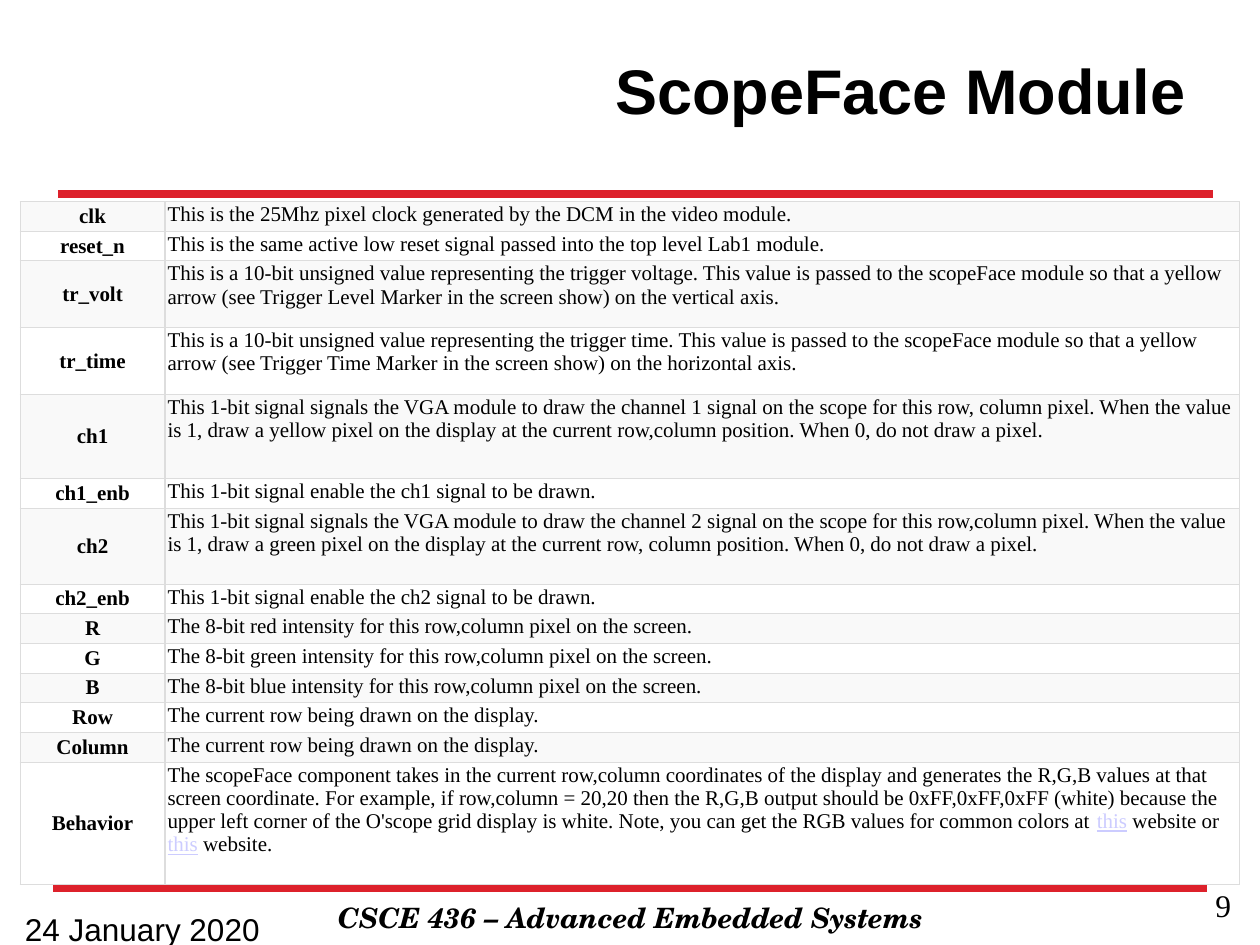
import pptx
import pptx.util
import pptx.dml.color
import pptx.enum.shapes
import pptx.enum.text
import pptx.oxml
import pptx.oxml.ns
import lxml.etree

Inches = pptx.util.Inches
ALIGN = pptx.enum.text.PP_ALIGN
ANCHOR = pptx.enum.text.MSO_ANCHOR

COLORS = {"text": "000000", "rule": "DD212B", "border": "DDDDDD",
          "odd": "F9F9F9", "even": "FFFFFF", "link": "CCCCFF"}
SERIF = "Times New Roman"
SLIDE_WIDTH, SLIDE_HEIGHT = 10, 7.5

TITLE = "ScopeFace Module"
COURSE = "CSCE 436 – Advanced Embedded Systems"
DATE = "24 January 2020"
PAGE = "9"
LINK = "this"

SIGNALS = [
    ("clk", "This is the 25Mhz pixel clock generated by the DCM in the video module."),
    ("reset_n", "This is the same active low reset signal passed into the top level Lab1 module."),
    ("tr_volt", "This is a 10-bit unsigned value representing the trigger voltage. This value is passed "
                "to the scopeFace module so that a yellow arrow (see Trigger Level Marker in the screen "
                "show) on the vertical axis."),
    ("tr_time", "This is a 10-bit unsigned value representing the trigger time. This value is passed "
                "to the scopeFace module so that a yellow arrow (see Trigger Time Marker in the screen "
                "show) on the horizontal axis."),
    ("ch1", "This 1-bit signal signals the VGA module to draw the channel 1 signal on the scope for "
            "this row, column pixel. When the value is 1, draw a yellow pixel on the display at the "
            "current row,column position. When 0, do not draw a pixel."),
    ("ch1_enb", "This 1-bit signal enable the ch1 signal to be drawn."),
    ("ch2", "This 1-bit signal signals the VGA module to draw the channel 2 signal on the scope for "
            "this row,column pixel. When the value is 1, draw a green pixel on the display at the "
            "current row, column position. When 0, do not draw a pixel."),
    ("ch2_enb", "This 1-bit signal enable the ch2 signal to be drawn."),
    ("R", "The 8-bit red intensity for this row,column pixel on the screen."),
    ("G", "The 8-bit green intensity for this row,column pixel on the screen."),
    ("B", "The 8-bit blue intensity for this row,column pixel on the screen."),
    ("Row", "The current row being drawn on the display."),
    ("Column", "The current row being drawn on the display."),
    ("Behavior", ("The scopeFace component takes in the current row,column coordinates of the display "
                  "and generates the R,G,B values at that screen coordinate. For example, if row,column "
                  "= 20,20 then the R,G,B output should be 0xFF,0xFF,0xFF (white) because the upper left "
                  "corner of the O'scope grid display is white. Note, you can get the RGB values for "
                  "common colors at ", LINK, " website or ", LINK, " website.")),
]
TALL_ROWS = {"tr_volt": 0.53, "tr_time": 0.53, "ch1": 0.67, "ch2": 0.6, "Behavior": 0.97}
TABLE_LEFT, TABLE_TOP, TABLE_HEIGHT = 0.16, 1.6, 5.42
COLUMN_WIDTHS = (1.15, 8.53)
RULES = [(0.42, 7.05, 9.58), (0.46, 1.54, 9.63)]


def rgb(key):
    return pptx.dml.color.RGBColor.from_string(COLORS[key])


def write(frame, text, *, size, font=SERIF, bold=False, italic=False, align=ALIGN.LEFT):
    frame.word_wrap = True
    paragraph = frame.paragraphs[0]
    paragraph.alignment = align
    for part in (text,) if isinstance(text, str) else text:
        run = paragraph.add_run()
        run.text = part
        run.font.size = pptx.util.Pt(size)
        run.font.name = font
        run.font.bold = bold
        run.font.italic = italic
        run.font.underline = part == LINK
        run.font.color.rgb = rgb("link" if part == LINK else "text")


def add_text(slide, box, text, anchor=ANCHOR.TOP, **text_format):
    frame = slide.shapes.add_textbox(*map(Inches, box)).text_frame
    frame.vertical_anchor = anchor
    write(frame, text, **text_format)


def add_rule(slide, left, top, right):
    rule = slide.shapes.add_connector(pptx.enum.shapes.MSO_CONNECTOR.STRAIGHT,
                                      *map(Inches, (left, top, right, top)))
    rule.line.color.rgb = rgb("rule")
    rule.line.width = pptx.util.Pt(4.5)
    lxml.etree.SubElement(rule._element.spPr, pptx.oxml.ns.qn("a:effectLst"))


def style_cell(cell, fill):
    properties = cell._tc.get_or_add_tcPr()
    for side in ("lnL", "lnR", "lnT", "lnB"):
        properties.append(pptx.oxml.parse_xml(
            f'<a:{side} {pptx.oxml.ns.nsdecls("a")} w="9525"><a:solidFill>'
            f'<a:srgbClr val="{COLORS["border"]}"/></a:solidFill></a:{side}>'))
    cell.fill.solid()
    cell.fill.fore_color.rgb = rgb(fill)
    cell.margin_left = cell.margin_right = Inches(0.02)
    cell.margin_top = cell.margin_bottom = Inches(0.01)


def add_signal_table(slide):
    box = (TABLE_LEFT, TABLE_TOP, sum(COLUMN_WIDTHS), TABLE_HEIGHT)
    table = slide.shapes.add_table(len(SIGNALS), len(COLUMN_WIDTHS), *map(Inches, box)).table
    table.first_row = table.horz_banding = False
    for column, width in zip(table.columns, COLUMN_WIDTHS):
        column.width = Inches(width)
    short_row = (TABLE_HEIGHT - sum(TALL_ROWS.values())) / (len(SIGNALS) - len(TALL_ROWS))
    for index, (signal, description) in enumerate(SIGNALS):
        table.rows[index].height = Inches(TALL_ROWS.get(signal, short_row))
        signal_cell, description_cell = table.rows[index].cells
        for cell in (signal_cell, description_cell):
            style_cell(cell, "even" if index % 2 else "odd")
        signal_cell.vertical_anchor = ANCHOR.MIDDLE
        write(signal_cell.text_frame, signal, size=12, bold=True, align=ALIGN.CENTER)
        write(description_cell.text_frame, description, size=12)


def main():
    deck = pptx.Presentation()
    deck.slide_width, deck.slide_height = Inches(SLIDE_WIDTH), Inches(SLIDE_HEIGHT)
    slide = deck.slides.add_slide(deck.slide_layouts[6])
    for rule in RULES:
        add_rule(slide, *rule)
    add_text(slide, (1.42, 7.1, 7.17, 0.37), COURSE, size=16, font="TeX Gyre Schola",
             bold=True, italic=True, align=ALIGN.CENTER)
    add_text(slide, (2.09, 0.08, 7.42, 1.25), TITLE, anchor=ANCHOR.MIDDLE, size=36,
             font="Arial", bold=True, align=ALIGN.RIGHT)
    add_signal_table(slide)
    add_text(slide, (7.54, 6.98, 2.33, 0.52), PAGE, size=18, align=ALIGN.RIGHT)
    add_text(slide, (0.1, 7.17, 2.33, 0.33), DATE, size=18, font="Arial")
    deck.save("out.pptx")


if __name__ == "__main__":
    main()
